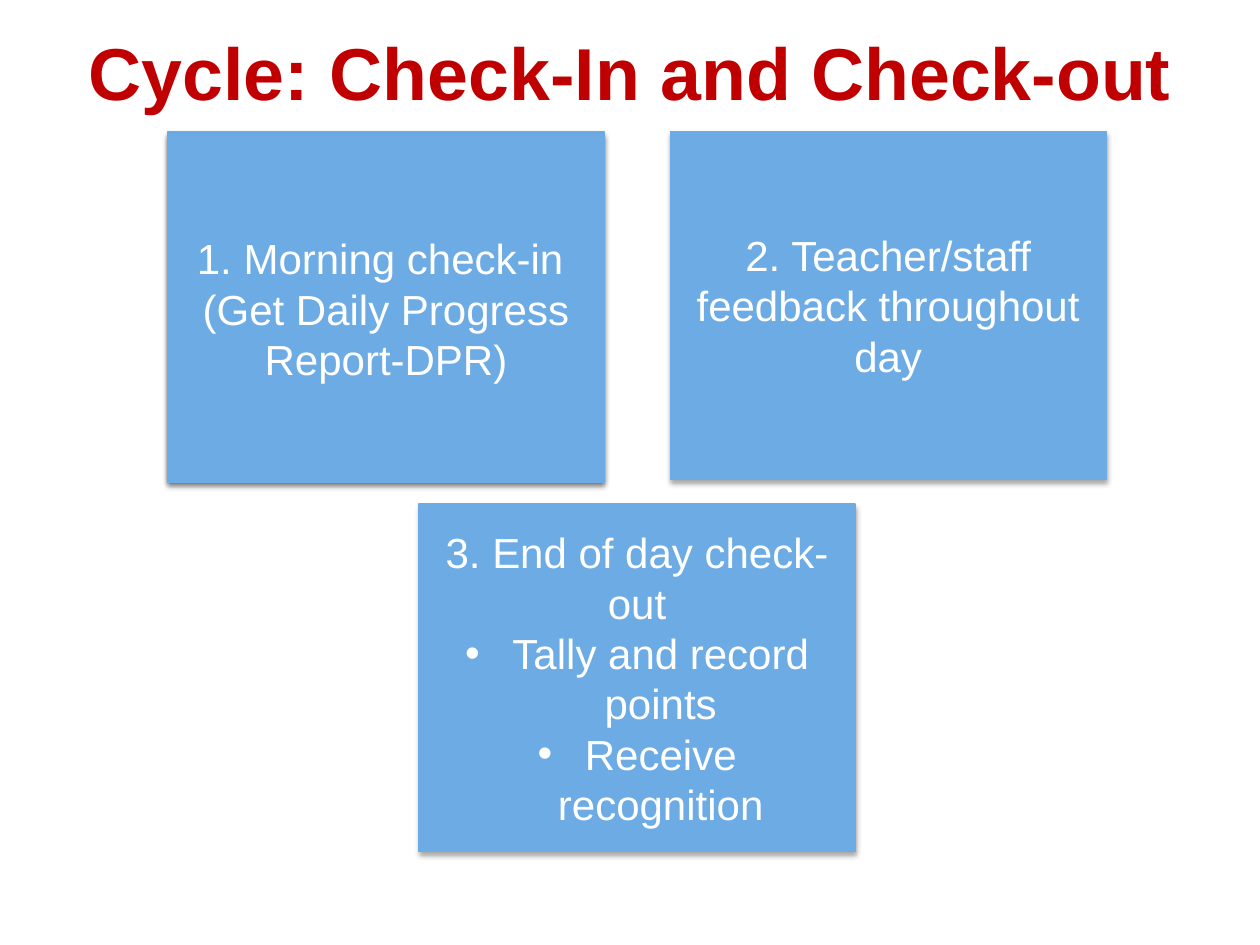
from lxml.etree import SubElement
from pptx import Presentation
from pptx.dml.color import RGBColor
from pptx.enum.shapes import MSO_SHAPE
from pptx.enum.text import MSO_ANCHOR as ANCHOR, PP_ALIGN as ALIGN
from pptx.oxml.ns import qn
from pptx.util import Pt

# Content: paragraphs are (text, is bulleted)
TITLE = "Cycle: Check-In and Check-out"
MORNING = [("1. Morning check-in ", False), ("(Get Daily Progress Report-DPR)", False)]
FEEDBACK = [("2. Teacher/staff feedback throughout day", False)]
CHECK_OUT = [("3. End of day check-out", False),
             ("Tally and record points", True),
             ("Receive recognition", True)]

# Formats
COLORS = {"title": "C00000", "box": "6DABE4", "text": "FFFFFF", "shadow": "000000"}
TITLE_FONT = {"name": "Arial", "size": Pt(42), "bold": True}
BOX_FONT = {"name": "Arial", "size": Pt(24), "bold": False}
TITLE_FRAME = {"margin_left": 0, "margin_top": 0, "margin_right": 0, "margin_bottom": 0,
               "vertical_anchor": ANCHOR.BOTTOM, "word_wrap": True}
BOX_FRAME = {"vertical_anchor": ANCHOR.MIDDLE, "word_wrap": True}
SHADOW = {"blurRad": Pt(3.1), "dist": Pt(1.8), "dir": 90 * 60000, "rotWithShape": 0}
INDENT = Pt(27)

# Layout in points: two boxes on top, the third centred below them
BOX_W, BOX_H = 249.1, 198.7
LEFT, RIGHT, TOP, BOTTOM = 96, 383, 75, 288
BOXES = [(LEFT, TOP, []),  # backing card
         (LEFT, TOP + 2, MORNING),
         (RIGHT, TOP, FEEDBACK),
         ((LEFT + RIGHT) / 2, BOTTOM, CHECK_OUT)]


def rgb(name):
    return RGBColor.from_string(COLORS[name])


def apply(target, values):
    for name, value in values.items():
        setattr(target, name, value)


def add_bullet(p):
    pPr = p._p.get_or_add_pPr()
    pPr.set("marL", str(INDENT))
    pPr.set("indent", str(-INDENT))
    SubElement(pPr, qn("a:buFont"), typeface="Arial")
    SubElement(pPr, qn("a:buChar"), char="•")


def add_shadow(sp):
    sp.shadow.inherit = False
    effects = sp._element.spPr.find(qn("a:effectLst"))
    shadow = SubElement(effects, qn("a:outerShdw"), {k: str(v) for k, v in SHADOW.items()})
    color = SubElement(shadow, qn("a:srgbClr"), val=COLORS["shadow"])
    SubElement(color, qn("a:alpha"), val="35000")


def write(tf, paragraphs, font, color):
    for i, (text, bulleted) in enumerate(paragraphs):
        p = tf.add_paragraph() if i else tf.paragraphs[0]
        p.alignment = ALIGN.CENTER
        if bulleted:
            add_bullet(p)
        r = p.add_run()
        r.text = text
        apply(r.font, font)
        r.font.color.rgb = rgb(color)


def add_box(s, x, y, paragraphs):
    sp = s.shapes.add_shape(MSO_SHAPE.RECTANGLE, Pt(x), Pt(y), Pt(BOX_W), Pt(BOX_H))
    sp.fill.solid()
    sp.fill.fore_color.rgb = rgb("box")
    sp.line.color.rgb = rgb("box")
    sp.line.width = Pt(0.75)
    add_shadow(sp)
    apply(sp.text_frame, BOX_FRAME)
    write(sp.text_frame, paragraphs, BOX_FONT, "text")


def main():
    prs = Presentation()
    prs.slide_width, prs.slide_height = Pt(720), Pt(540)
    s = prs.slides.add_slide(prs.slide_layouts[5])

    # Title
    title = s.shapes.title
    apply(title, {"left": Pt(12), "top": Pt(15), "width": Pt(696), "height": Pt(51)})
    apply(title.text_frame, TITLE_FRAME)
    write(title.text_frame, [(TITLE, False)], TITLE_FONT, "title")

    # Cycle steps
    for x, y, paragraphs in BOXES:
        add_box(s, x, y, paragraphs)

    prs.save("out.pptx")


if __name__ == "__main__":
    main()
